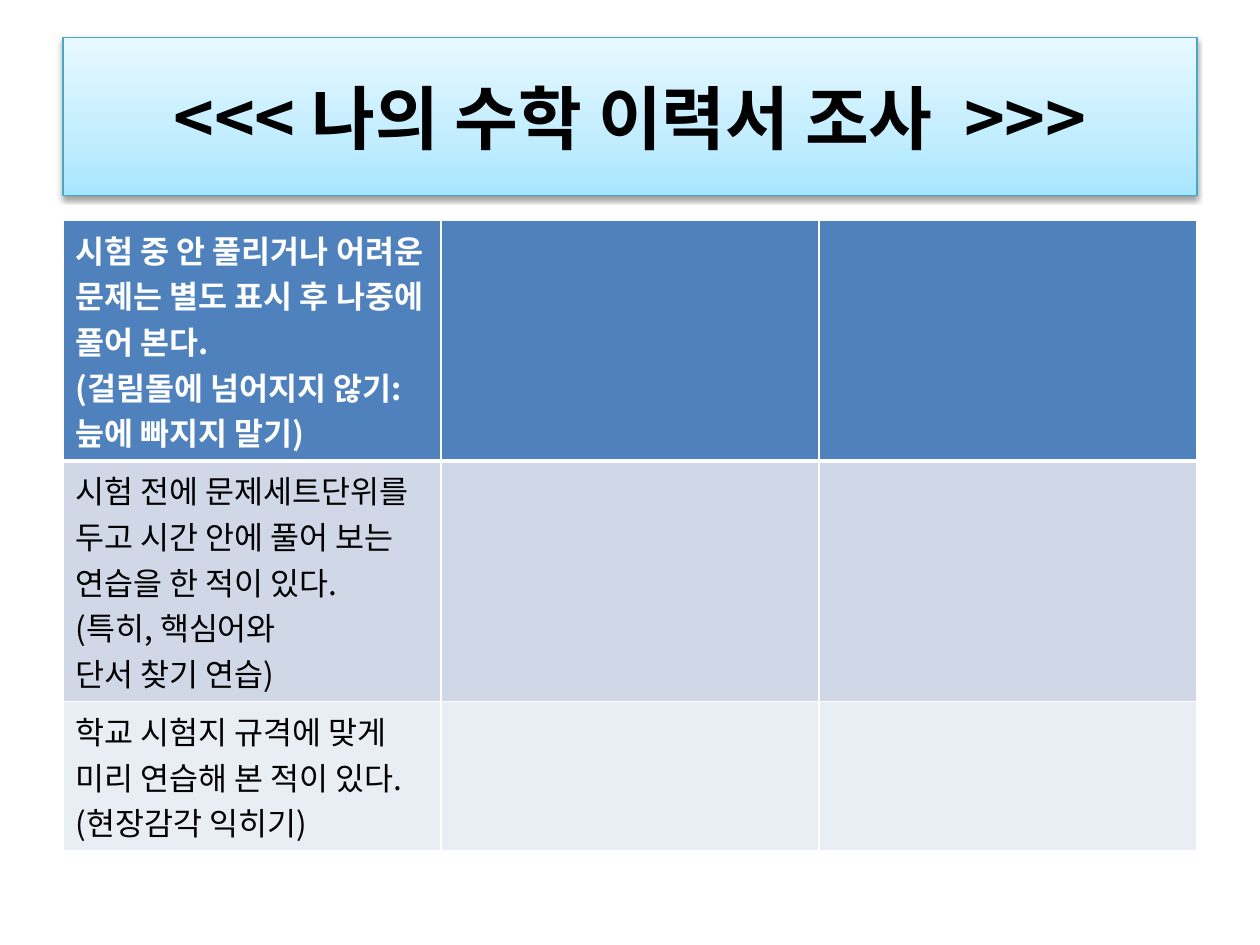
from copy import deepcopy
from dataclasses import dataclass

from lxml.etree import SubElement
from pptx import Presentation
from pptx.dml.color import RGBColor
from pptx.enum.shapes import MSO_SHAPE as Shape
from pptx.enum.text import MSO_ANCHOR as Anchor, PP_ALIGN as Align
from pptx.oxml.ns import qn
from pptx.util import Inches, Pt

FONT = "Noto Sans CJK KR"
LEFT, WIDTH = 0.5, 9
COLUMNS = 3


@dataclass
class SurveyRow:
    lines: list[str]
    height: float
    fill: str
    color: str = "000000"
    bold: bool = False
    top: float = 1
    bottom: float = 1


ROWS = [
    SurveyRow(
        ["시험 중 안 풀리거나 어려운 문제는 별도 표시 후 나중에 풀어 본다.",
         "(걸림돌에 넘어지지 않기:늪에 빠지지 말기)"],
        1.9, "4F81BD", color="FFFFFF", bold=True, bottom=3),
    SurveyRow(
        ["시험 전에 문제세트단위를 두고 시간 안에 풀어 보는 연습을 한 적이 있다.",
         "(특히, 핵심어와", "단서 찾기 연습)"],
        1.91, "D0D8E8", top=3),
    SurveyRow(
        ["학교 시험지 규격에 맞게 미리 연습해 본 적이 있다.(현장감각 익히기)"],
        1.18, "E9EDF4"),
]


def rgb(value: str) -> RGBColor:
    return RGBColor.from_string(value)


def write(frame, lines: list[str], *, size: float, color: str = "000000",
          bold: bool = False, align=Align.LEFT) -> None:
    for index, line in enumerate(lines):
        para = frame.paragraphs[0] if index == 0 else frame.add_paragraph()
        para.alignment = align
        span = para.add_run()
        span.text = line
        font = span.font
        font.name, font.size, font.bold = FONT, Pt(size), bold
        font.color.rgb = rgb(color)
        SubElement(font._element, qn("a:ea"), typeface=FONT)


def fill_gradient(shape, stops: list[tuple[float, str]], angle: float) -> None:
    shape.fill.gradient()
    shape.fill.gradient_angle = angle
    stop_list = shape._element.spPr.find(".//" + qn("a:gsLst"))
    while len(stop_list) < len(stops):
        stop_list.append(deepcopy(stop_list[0]))
    for stop, (position, color) in zip(shape.fill.gradient_stops, stops):
        stop.position = position
        stop.color.rgb = rgb(color)


def add_shadow(shape, *, blur: float, distance: float, color: str, opacity: int) -> None:
    shape.shadow.inherit = False
    effects = shape._element.spPr.find(qn("a:effectLst"))
    shadow = SubElement(effects, qn("a:outerShdw"), blurRad=str(Pt(blur)),
                        dist=str(Pt(distance)), dir="5400000", rotWithShape="0")
    tint = SubElement(shadow, qn("a:srgbClr"), val=color)
    SubElement(tint, qn("a:alpha"), val=str(opacity * 1000))


def add_title(page, text: str) -> None:
    box = page.shapes.add_shape(
        Shape.RECTANGLE, Inches(LEFT), Inches(0.3), Inches(WIDTH), Inches(1.25))
    fill_gradient(box, [(0, "A7E6FF"), (0.35, "C1EDFF"), (1, "E7F8FF")], 90)
    box.line.color.rgb = rgb("46AAC5")
    box.line.width = Pt(0.75)
    add_shadow(box, blur=3.1, distance=1.6, color="000000", opacity=38)
    box.text_frame.word_wrap = True
    box.text_frame.vertical_anchor = Anchor.MIDDLE
    write(box.text_frame, [text], size=39.6, bold=True, align=Align.CENTER)


def set_borders(cell, color: str, widths: dict[str, float]) -> None:
    properties = cell._tc.get_or_add_tcPr()
    for side, width in widths.items():
        line = SubElement(properties, qn(f"a:ln{side}"), w=str(Pt(width)))
        SubElement(SubElement(line, qn("a:solidFill")), qn("a:srgbClr"), val=color)


def add_survey(page, rows: list[SurveyRow]) -> None:
    table = page.shapes.add_table(
        len(rows), COLUMNS, Inches(LEFT), Inches(1.75), Inches(WIDTH),
        Inches(sum(row.height for row in rows))).table
    for column in table.columns:
        column.width = Inches(WIDTH / COLUMNS)
    for table_row, row in zip(table.rows, rows):
        table_row.height = Inches(row.height)
        for cell in table_row.cells:
            set_borders(cell, "FFFFFF", {"L": 1, "R": 1, "T": row.top, "B": row.bottom})
            cell.fill.solid()
            cell.fill.fore_color.rgb = rgb(row.fill)
        write(table_row.cells[0].text_frame, row.lines,
              size=18, color=row.color, bold=row.bold)


def main() -> None:
    """Build the maths history survey slide."""
    deck = Presentation()
    deck.slide_width, deck.slide_height = Inches(10), Inches(7.5)
    page = deck.slides.add_slide(deck.slide_layouts[6])
    add_title(page, "<<< 나의 수학 이력서 조사  >>>")
    add_survey(page, ROWS)
    deck.save("out.pptx")


if __name__ == "__main__":
    main()
